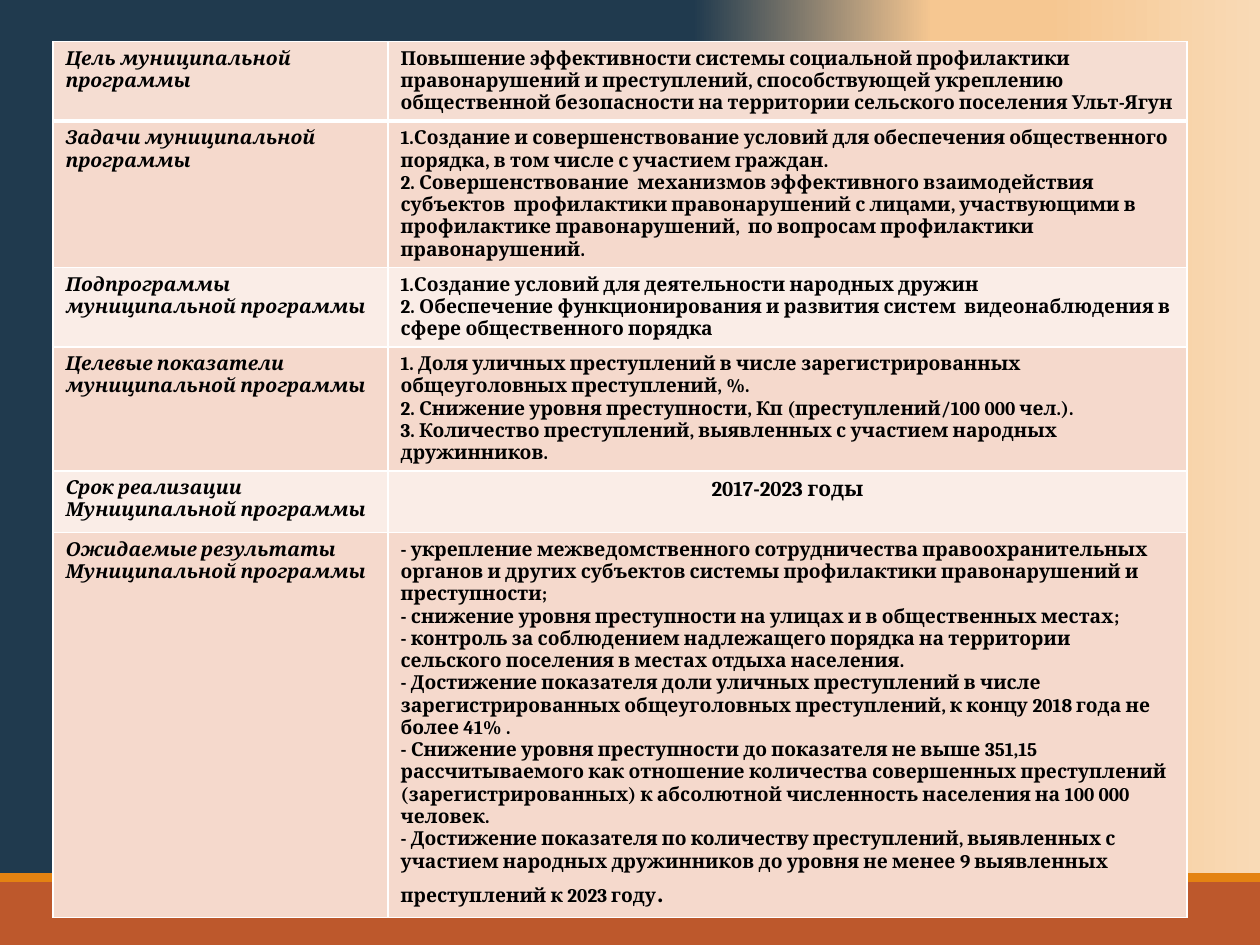
import dataclasses

import pptx
import pptx.dml.color
import pptx.enum.shapes
import pptx.enum.text
import pptx.oxml
import pptx.oxml.ns
import pptx.util
from pptx.util import Inches


@dataclasses.dataclass(frozen=True)
class Theme:
    font: str = "Cambria"
    dot_font: str = "Calibri"
    text: str = "000000"
    line: str = "FFFFFF"
    head: str = "F5DDD2"
    odd: str = "F5D9CC"
    even: str = "FAEDE7"
    base: str = "BD582C"
    strip: str = "E48312"
    stops: tuple = ((55, "203A4E"), (74, "F6C791"), (83, "F6C791"), (100, "F9DAB6"))
    body: int = 11
    term: int = 12
    dot: int = 18
    thin: int = 1
    thick: int = 3


THEME = Theme()
COLS = (2.66, 6.34)
TERM = "2017-2023 годы"

# Row height, label paragraphs, detail paragraphs
ROWS = (
    (0.58, ["Цель муниципальной программы"], [
        "Повышение эффективности системы социальной профилактики правонарушений и "
        "преступлений, способствующей укреплению общественной безопасности на "
        "территории сельского поселения Ульт-Ягун"]),
    (1.03, ["Задачи муниципальной программы"], [
        "1.Создание и совершенствование условий для обеспечения общественного "
        "порядка, в том числе с участием граждан.",
        "2. Совершенствование  механизмов эффективного взаимодействия субъектов  "
        "профилактики правонарушений с лицами, участвующими в профилактике "
        "правонарушений,  по вопросам профилактики правонарушений."]),
    (0.6, ["Подпрограммы", "муниципальной программы"], [
        "1.Создание условий для деятельности народных дружин",
        "2. Обеспечение функционирования и развития систем  видеонаблюдения в "
        "сфере общественного порядка"]),
    (0.85, ["Целевые показатели", "муниципальной программы"], [
        "1. Доля уличных преступлений в числе зарегистрированных общеуголовных "
        "преступлений, %.",
        "2. Снижение уровня преступности, Кп (преступлений/100 000 чел.).",
        "3. Количество преступлений, выявленных с участием народных дружинников."]),
    (0.49, ["Срок реализации", "Муниципальной программы"], [TERM]),
    (2.9, ["Ожидаемые результаты", "Муниципальной программы"], [
        "- укрепление межведомственного сотрудничества правоохранительных органов и "
        "других субъектов системы профилактики правонарушений и преступности;",
        "- снижение уровня преступности на улицах и в общественных местах;",
        "- контроль за соблюдением надлежащего порядка на территории сельского "
        "поселения в местах отдыха населения.",
        "- Достижение показателя доли уличных преступлений в числе "
        "зарегистрированных общеуголовных преступлений, к концу 2018 года не "
        "более 41% .",
        "- Снижение уровня преступности до показателя не выше 351,15 "
        "рассчитываемого как отношение количества совершенных преступлений "
        "(зарегистрированных) к абсолютной численность населения на 100 000 человек.",
        "- Достижение показателя по количеству преступлений, выявленных с участием "
        "народных дружинников до уровня не менее 9 выявленных преступлений к "
        "2023 году"]),
)


def rgb(code):
    return pptx.dml.color.RGBColor.from_string(code)


def paint(fill, code):
    fill.solid()
    fill.fore_color.rgb = rgb(code)


def set_back(slide):
    """Fill the background with the left-to-right gradient."""
    fill = slide.background.fill
    fill.gradient()
    fill.gradient_angle = 0
    ramp = slide.background._cSld.find(".//" + pptx.oxml.ns.qn("a:gsLst"))
    for stop in list(ramp):
        ramp.remove(stop)
    for place, code in THEME.stops:
        ramp.append(pptx.oxml.parse_xml(
            f'<a:gs {pptx.oxml.ns.nsdecls("a")} pos="{place * 1000}">'
            f'<a:srgbClr val="{code}"/></a:gs>'))


def add_foot(slide, left, top, width, height):
    """Draw the base band with a thin strip along its top."""
    strip = 0.07
    for y, tall, code in ((top + strip, height - strip, THEME.base),
                          (top, strip, THEME.strip)):
        band = slide.shapes.add_shape(
            pptx.enum.shapes.MSO_SHAPE.RECTANGLE,
            Inches(left), Inches(y), Inches(width), Inches(tall))
        band.shadow.inherit = False
        paint(band.fill, code)
        band.line.fill.background()


def style(run, size, italic=False, bold=True, font=THEME.font):
    run.font.name = font
    run.font.size = pptx.util.Pt(size)
    run.font.bold = bold
    run.font.italic = italic
    run.font.color.rgb = rgb(THEME.text)


def set_edges(cell, top, bottom):
    """Draw the cell borders; top and bottom are widths in points."""
    props = cell._tc.get_or_add_tcPr()
    sides = (("L", THEME.thin), ("R", THEME.thin), ("T", top), ("B", bottom))
    for spot, (side, width) in enumerate(sides):
        props.insert(spot, pptx.oxml.parse_xml(
            f'<a:ln{side} {pptx.oxml.ns.nsdecls("a")} w="{pptx.util.Pt(width)}">'
            f'<a:solidFill><a:srgbClr val="{THEME.line}"/></a:solidFill>'
            f'</a:ln{side}>'))


def fill_cell(cell, lines, size, italic):
    cell.text_frame.text = "\n".join(lines)
    for para in cell.text_frame.paragraphs:
        for run in para.runs:
            style(run, size, italic)


def add_grid(slide, left, top, width, height):
    """Place the programme table: labels on the left, details on the right."""
    grid = slide.shapes.add_table(
        len(ROWS), len(COLS), Inches(left), Inches(top),
        Inches(width), Inches(height)).table
    for col, wide in zip(grid.columns, COLS):
        col.width = Inches(wide)
    for i, (tall, label, detail) in enumerate(ROWS):
        grid.rows[i].height = Inches(tall)
        tint = THEME.head if i == 0 else THEME.odd if i % 2 else THEME.even
        size = THEME.term if detail == [TERM] else THEME.body
        fill_cell(grid.cell(i, 0), label, THEME.body, True)
        fill_cell(grid.cell(i, 1), detail, size, False)
        if detail == [TERM]:
            para = grid.cell(i, 1).text_frame.paragraphs[0]
            para.alignment = pptx.enum.text.PP_ALIGN.CENTER
        for j in range(len(COLS)):
            paint(grid.cell(i, j).fill, tint)
            set_edges(grid.cell(i, j),
                      THEME.thick if i == 1 else THEME.thin,
                      THEME.thick if i == 0 else THEME.thin)
    dot = grid.cell(len(ROWS) - 1, 1).text_frame.paragraphs[-1].add_run()
    dot.text = "."
    style(dot, THEME.dot, bold=False, font=THEME.dot_font)


def main():
    deck = pptx.Presentation()
    deck.slide_width, deck.slide_height = Inches(10), Inches(7.5)
    slide = deck.slides.add_slide(deck.slide_layouts[6])
    set_back(slide)
    add_foot(slide, 0, 6.93, 10, 0.57)
    add_grid(slide, 0.42, 0.33, sum(COLS), sum(row[0] for row in ROWS))
    deck.save("out.pptx")


if __name__ == "__main__":
    main()
